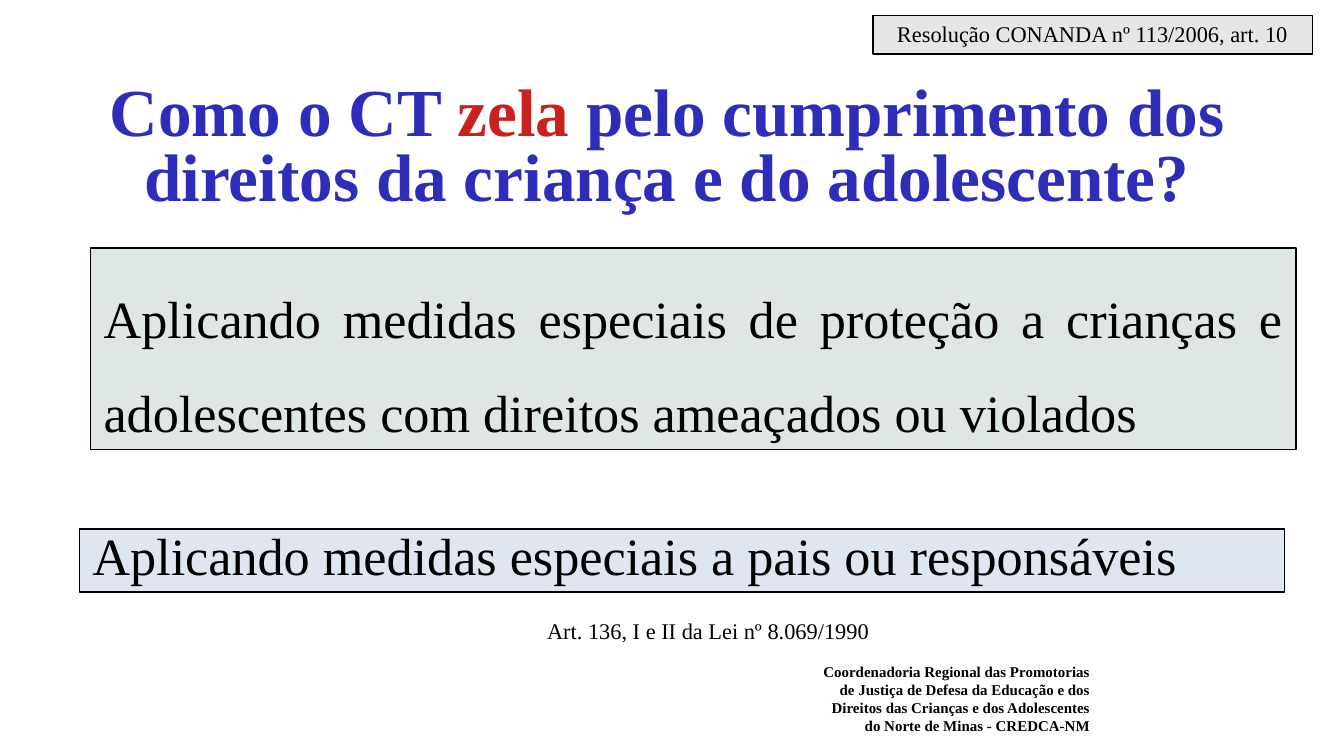
from dataclasses import dataclass

from pptx import Presentation
from pptx.dml.color import RGBColor
from pptx.enum.shapes import MSO_SHAPE
from pptx.enum.text import MSO_ANCHOR, MSO_AUTO_SIZE, PP_ALIGN
from pptx.util import Inches, Pt

RECTANGLE = MSO_SHAPE.RECTANGLE
TOP = MSO_ANCHOR.TOP
NO_AUTOFIT = MSO_AUTO_SIZE.NONE
CENTER, RIGHT, JUSTIFY = PP_ALIGN.CENTER, PP_ALIGN.RIGHT, PP_ALIGN.JUSTIFY

FONT = "Times New Roman"
TITLE_ONLY = 5
COLORS = {
    "text": "000000",
    "title": "2D2DB9",
    "accent": "C9211E",
    "source": "E6E6E6",
    "children": "DEE7E5",
    "parents": "DEE6EF",
}

deck = Presentation()
deck.slide_width = Inches(10)
deck.slide_height = deck.slide_width * 9 // 16


@dataclass
class Area:
    """Position and size in percent of the slide's width and height."""
    left: float
    top: float
    width: float
    height: float

    def lengths(self) -> tuple[int, int, int, int]:
        across, down = deck.slide_width / 100, deck.slide_height / 100
        return (round(self.left * across), round(self.top * down),
                round(self.width * across), round(self.height * down))


@dataclass
class TextBlock:
    area: Area
    spans: list[tuple[str, str]]
    size: int
    align: PP_ALIGN
    spacing: float = 1.0
    bold: bool = False
    fill: str = ""


def write(shape, block: TextBlock) -> None:
    frame = shape.text_frame
    frame.word_wrap = True
    frame.auto_size = NO_AUTOFIT
    frame.vertical_anchor = TOP
    frame.margin_left = frame.margin_right = Inches(0.1)
    frame.margin_top = frame.margin_bottom = Inches(0.05)
    para = frame.paragraphs[0]
    para.alignment = block.align
    para.line_spacing = block.spacing
    para.space_before = Pt(0)
    for text, color in block.spans:
        span = para.add_run()
        span.text = text
        span.font.name = FONT
        span.font.size = Pt(block.size)
        span.font.bold = block.bold
        span.font.color.rgb = RGBColor.from_string(COLORS[color])


def add_block(page, block: TextBlock) -> None:
    """Add a framed rectangle if the block has a fill, else a text box."""
    if block.fill:
        box = page.shapes.add_shape(RECTANGLE, *block.area.lengths())
        box.shadow.inherit = False
        box.fill.solid()
        box.fill.fore_color.rgb = RGBColor.from_string(COLORS[block.fill])
        box.line.color.rgb = RGBColor.from_string(COLORS["text"])
        box.line.width = Pt(0.75)
    else:
        box = page.shapes.add_textbox(*block.area.lengths())
    write(box, block)


def set_title(page, block: TextBlock) -> None:
    title = page.shapes.title
    title.left, title.top, title.width, title.height = block.area.lengths()
    write(title, block)


TITLE = TextBlock(
    Area(4.8, 10.4, 89.7, 18.84),
    [("Como o CT ", "title"), ("zela", "accent"),
     (" pelo cumprimento dos direitos da criança e do adolescente?", "title")],
    36, CENTER, spacing=0.8, bold=True)

BLOCKS = [
    TextBlock(Area(60.2, 86.76, 21.9, 13.69),
              [("Coordenadoria Regional das Promotorias de Justiça de Defesa da "
                "Educação e dos Direitos das Crianças e dos Adolescentes do Norte "
                "de Minas - CREDCA-NM", "text")],
              8, RIGHT, bold=True),
    TextBlock(Area(64.95, 2.05, 32.7, 5.1),
              [("Resolução CONANDA nº 113/2006, art. 10", "text")],
              12, CENTER, spacing=0.93, fill="source"),
    TextBlock(Area(6.73, 32.82, 89.7, 26.67),
              [("Aplicando medidas especiais de proteção a crianças e "
                "adolescentes com direitos ameaçados ou violados", "text")],
              28, JUSTIFY, spacing=1.5, fill="children"),
    TextBlock(Area(5.9, 69.97, 89.7, 8.36),
              [("Aplicando medidas especiais a pais ou responsáveis", "text")],
              28, JUSTIFY, spacing=0.8, fill="parents"),
    TextBlock(Area(32.5, 80.71, 40.4, 6.76),
              [("Art. 136, I e II da Lei nº 8.069/1990", "text")],
              12, CENTER),
]

page = deck.slides.add_slide(deck.slide_layouts[TITLE_ONLY])
set_title(page, TITLE)
for block in BLOCKS:
    add_block(page, block)
deck.save("out.pptx")
